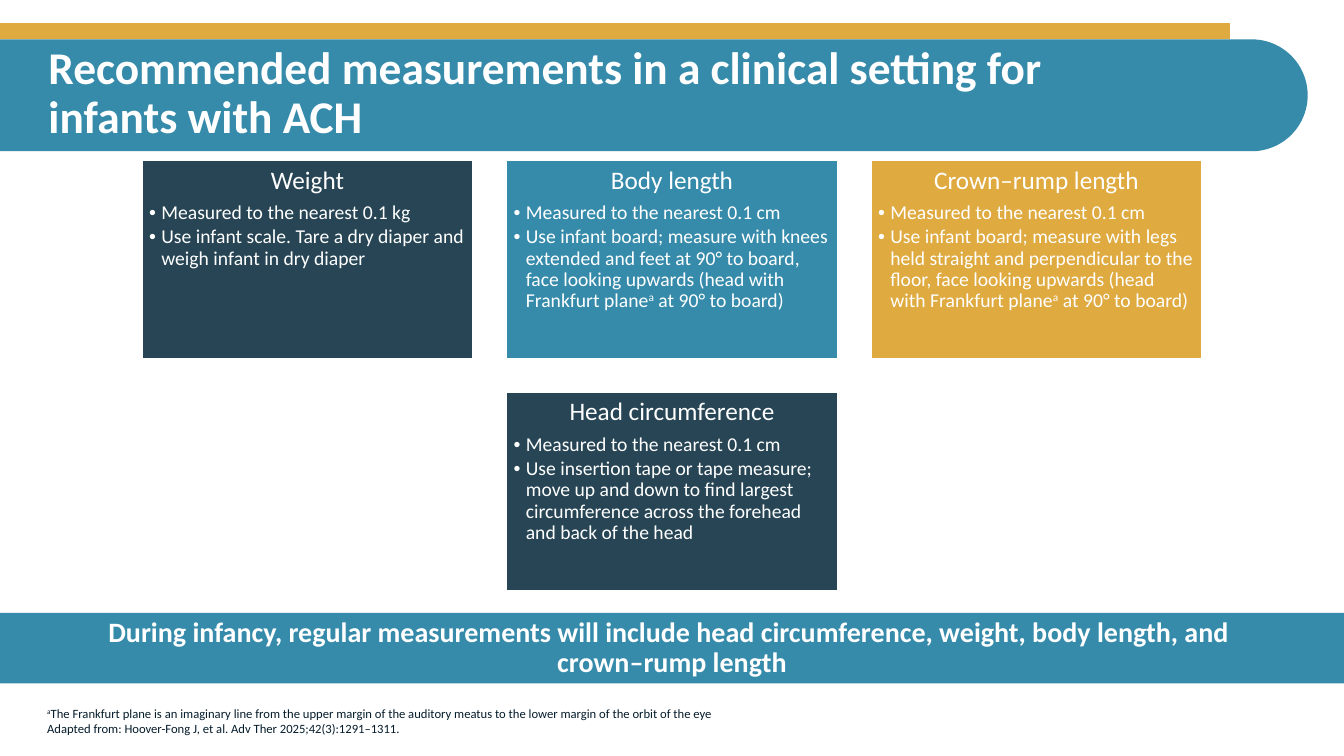
from dataclasses import dataclass

from lxml.etree import SubElement
from pptx import Presentation
from pptx.dml.color import RGBColor
from pptx.enum.shapes import MSO_SHAPE as Preset
from pptx.enum.text import MSO_ANCHOR as Anchor, MSO_AUTO_SIZE as AutoSize, PP_ALIGN as Align
from pptx.oxml.ns import qn
from pptx.util import Inches, Pt

COLOURS = {"gold": "DFAA40", "teal": "368BAB", "navy": "274554",
           "white": "FFFFFF", "ink": "051C2C"}
FONT = "Calibri"
CARD_WIDTH, CARD_HEIGHT = 3.28, 1.97
CARD_LEFT, CARD_TOP = 1.41, 1.59
COLUMN_STEP, ROW_STEP = 3.615, 2.3


@dataclass
class Card:
    heading: str
    unit: str
    method: str
    colour: str
    column: int
    row: int = 0


# In card and footnote text, ^ marks the footnote letter a.
CARDS = [
    Card("Weight", "kg",
         "Use infant scale. Tare a dry diaper and weigh infant in dry diaper", "navy", 0),
    Card("Body length", "cm",
         "Use infant board; measure with knees extended and feet at 90° to board, "
         "face looking upwards (head with Frankfurt plane^ at 90° to board)", "teal", 1),
    Card("Crown–rump length", "cm",
         "Use infant board; measure with legs held straight and perpendicular to the floor, "
         "face looking upwards (head with Frankfurt plane^ at 90° to board)", "gold", 2),
    Card("Head circumference", "cm",
         "Use insertion tape or tape measure; move up and down to find largest "
         "circumference across the forehead and back of the head", "navy", 1, 1),
]
FOOTNOTES = [
    "^The Frankfurt plane is an imaginary line from the upper margin of the auditory meatus "
    "to the lower margin of the orbit of the eye",
    "Adapted from: Hoover-Fong J, et al. Adv Ther 2025;42(3):1291–1311.",
]


def rgb(name: str) -> RGBColor:
    return RGBColor.from_string(COLOURS[name])


def place(shape, left: float, top: float, width: float, height: float) -> None:
    shape.left, shape.top = Inches(left), Inches(top)
    shape.width, shape.height = Inches(width), Inches(height)


def add_block(slide, preset, left: float, top: float, width: float, height: float, colour: str):
    block = slide.shapes.add_shape(preset, Inches(left), Inches(top),
                                   Inches(width), Inches(height))
    block.shadow.inherit = False
    block.fill.solid()
    block.fill.fore_color.rgb = rgb(colour)
    block.line.fill.background()
    return block


def set_frame(shape, anchor, side: float, vertical: float):
    frame = shape.text_frame
    frame.word_wrap = True
    frame.auto_size = AutoSize.NONE
    frame.vertical_anchor = anchor
    frame.margin_left = frame.margin_right = Inches(side)
    frame.margin_top = frame.margin_bottom = Inches(vertical)
    return frame


def add_run(para, text: str, size: float, colour: str, bold: bool = False,
            raised: bool = False) -> None:
    span = para.add_run()
    span.text = text
    span.font.name, span.font.size, span.font.bold = FONT, Pt(size), bold
    span.font.color.rgb = rgb(colour)
    if raised:
        span._r.get_or_add_rPr().set("baseline", "30000")


def add_marked_text(para, text: str, size: float, colour: str) -> None:
    """Write text, turning each ^ into a raised footnote letter."""
    for number, part in enumerate(text.split("^")):
        if number:
            add_run(para, "a", size, colour, raised=True)
        if part:
            add_run(para, part, size, colour)


def format_para(para, align, after: float = 0, spacing: float = 0.9) -> None:
    para.alignment = align
    para.line_spacing = spacing
    para.space_before, para.space_after = Pt(0), Pt(after)


def set_bullet(para, symbol: str = "", indent: float = 0) -> None:
    """Give the paragraph a hanging bullet, or none when symbol is empty."""
    props = para._p.get_or_add_pPr()
    props.set("marL", str(Inches(indent)))
    props.set("indent", str(-Inches(indent)))
    if symbol:
        SubElement(props, qn("a:buFont"), typeface="Arial")
        SubElement(props, qn("a:buChar"), char=symbol)
    else:
        SubElement(props, qn("a:buNone"))


def fill_placeholder(shape, lines: list[str], size: float, align, side: float) -> None:
    """Write bold white lines with breaks between, and bring the shape to the front."""
    shape.element.getparent().append(shape.element)
    para = set_frame(shape, Anchor.MIDDLE, side, 0.05).paragraphs[0]
    format_para(para, align)
    set_bullet(para)
    for number, line in enumerate(lines):
        if number:
            para.add_line_break()
        add_run(para, line, size, "white", bold=True)


def add_card(slide, card: Card) -> None:
    box = add_block(slide, Preset.RECTANGLE, CARD_LEFT + card.column * COLUMN_STEP,
                    CARD_TOP + card.row * ROW_STEP, CARD_WIDTH, CARD_HEIGHT, card.colour)
    box.line.color.rgb = rgb("white")
    box.line.width = Pt(1)
    frame = set_frame(box, Anchor.TOP, 0.07, 0.07)
    heading = frame.paragraphs[0]
    format_para(heading, Align.CENTER, after=6)
    add_run(heading, card.heading, 18, "white")
    for text in (f"Measured to the nearest 0.1 {card.unit}", card.method):
        para = frame.add_paragraph()
        format_para(para, Align.LEFT, after=2)
        para.level = 1
        set_bullet(para, "•", 0.12)
        add_marked_text(para, text, 14, "white")


def add_footnotes(slide) -> None:
    box = slide.shapes.add_textbox(Inches(0.37), Inches(6.71), Inches(10.67), Inches(0.64))
    frame = set_frame(box, Anchor.BOTTOM, 0.1, 0.05)
    for number, note in enumerate(FOOTNOTES):
        para = frame.add_paragraph() if number else frame.paragraphs[0]
        format_para(para, Align.LEFT, spacing=1.0)
        add_marked_text(para, note, 9, "ink")


def main() -> None:
    deck = Presentation()
    deck.slide_width, deck.slide_height = Inches(13.33), Inches(7.5)
    page = deck.slides.add_slide(deck.slide_layouts[1])
    title, banner = page.shapes.title, page.placeholders[1]

    add_block(page, Preset.RECTANGLE, 0, 0.23, 12.2, 0.16, "gold")
    band = add_block(page, Preset.ROUND_2_SAME_RECTANGLE, 5.93, -5.54, 1.11, 12.97, "teal")
    band.adjustments[0], band.adjustments[1] = 0, 0.5
    band.rotation = 270

    place(banner, 0, 6.08, 13.33, 0.7)
    banner.fill.solid()
    banner.fill.fore_color.rgb = rgb("teal")
    fill_placeholder(banner, ["During infancy, regular measurements will include head "
                              "circumference, weight, body length, and ",
                              "crown–rump length"], 20, Align.CENTER, 0)
    place(title, 0.38, 0.39, 12.2, 1.1)
    fill_placeholder(title, ["Recommended measurements in a clinical setting for ",
                             "infants with ACH"], 32.4, Align.LEFT, 0.1)
    add_footnotes(page)
    for card in CARDS:
        add_card(page, card)
    deck.save("out.pptx")


if __name__ == "__main__":
    main()
